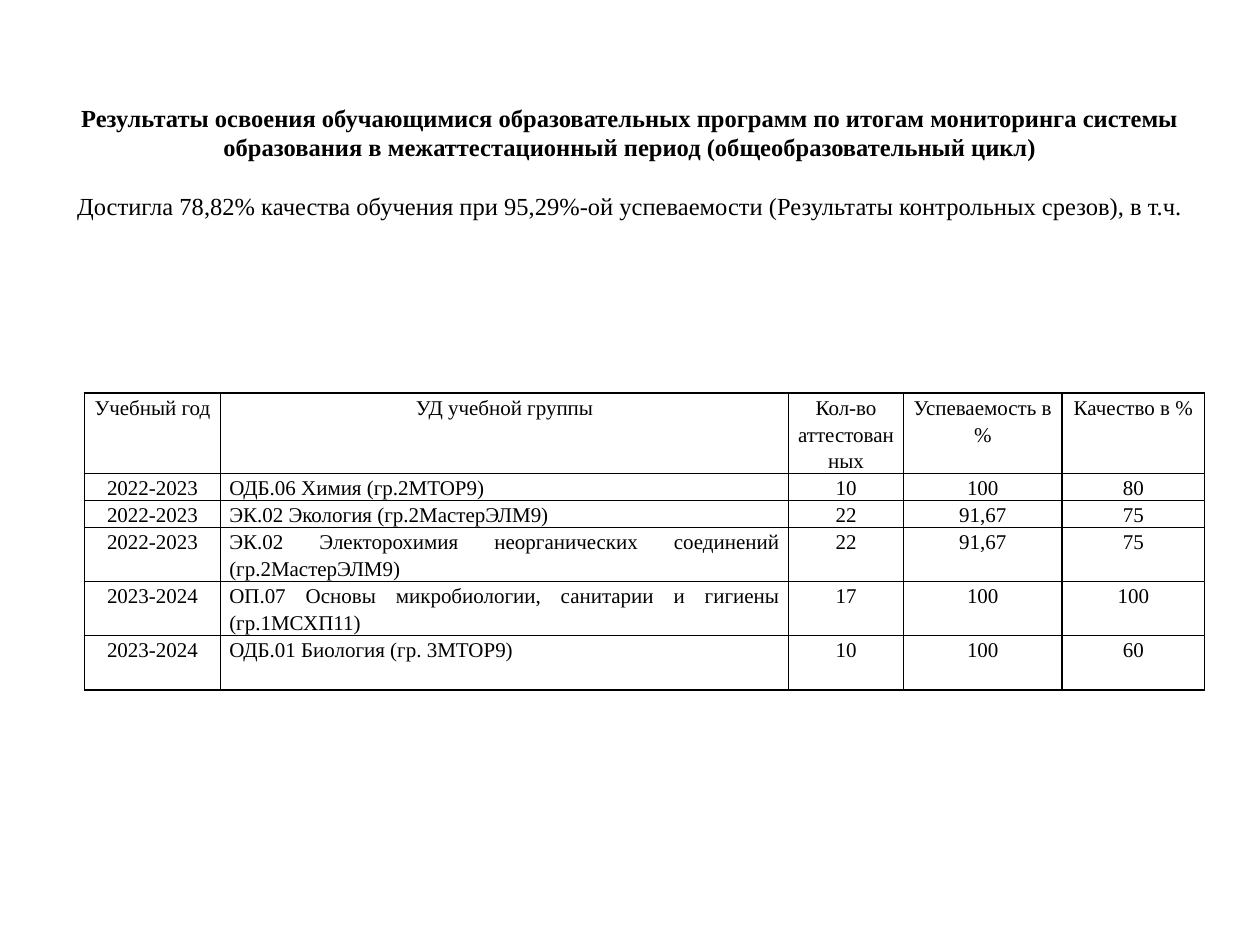
from typing import NamedTuple

from lxml import etree
from pptx import Presentation
from pptx.dml.color import RGBColor
from pptx.enum import text
from pptx.oxml import ns
from pptx.util import Inches, Pt

FONT = "Times New Roman"
HUES = {"ink": "000000", "line": "000000"}
CENTER, JUSTIFY = text.PP_ALIGN.CENTER, text.PP_ALIGN.JUSTIFY


class Row(NamedTuple):
    year: str
    course: str
    count: str
    passed: str
    quality: str


HEAD = Row("Учебный год", "УД учебной группы", "Кол-во аттестованных",
           "Успеваемость в %", "Качество в %")
ROWS = [
    HEAD,
    Row("2022-2023", "ОДБ.06 Химия (гр.2МТОР9)", "10", "100", "80"),
    Row("2022-2023", "ЭК.02 Экология (гр.2МастерЭЛМ9)", "22", "91,67", "75"),
    Row("2022-2023", "ЭК.02 Электорохимия неорганических соединений (гр.2МастерЭЛМ9)",
        "22", "91,67", "75"),
    Row("2023-2024", "ОП.07 Основы микробиологии, санитарии и гигиены (гр.1МСХП11)",
        "17", "100", "100"),
    Row("2023-2024", "ОДБ.01 Биология (гр. 3МТОР9)", "10", "100", "60"),
]
WIDTHS = [1.08, 4.51, 0.91, 1.26, 1.13]
HEIGHTS = [0.64, 0.21, 0.21, 0.43, 0.43, 0.43]


def style(para, size: float, align, bold: bool = False) -> None:
    para.alignment = align
    font = para.font
    font.name, font.size, font.bold = FONT, Pt(size), bold
    font.color.rgb = RGBColor.from_string(HUES["ink"])


def border(cell) -> None:
    props = cell._tc.get_or_add_tcPr()
    for spot, side in enumerate(("lnL", "lnR", "lnT", "lnB")):
        line = etree.Element(ns.qn(f"a:{side}"), w=str(Pt(1)))
        fill = etree.SubElement(line, ns.qn("a:solidFill"))
        etree.SubElement(fill, ns.qn("a:srgbClr"), val=HUES["line"])
        props.insert(spot, line)


def fill_cell(cell, words: str, align) -> None:
    cell.text = words
    cell.margin_left = cell.margin_right = Inches(0.07)
    cell.margin_top = cell.margin_bottom = 0
    cell.fill.background()
    para = cell.text_frame.paragraphs[0]
    style(para, 12, align)
    para.line_spacing = 1.15
    border(cell)


def add_title(slide) -> None:
    title = slide.shapes.title
    title.left, title.top = Inches(0.5), Inches(0)
    title.width, title.height = Inches(9), Inches(2.57)
    frame = title.text_frame
    frame.auto_size = text.MSO_AUTO_SIZE.NONE
    frame.vertical_anchor = text.MSO_ANCHOR.MIDDLE
    head = frame.paragraphs[0]
    head.text = ("Результаты освоения обучающимися образовательных программ по итогам "
                 "мониторинга системы образования в межаттестационный период "
                 "(общеобразовательный цикл)")
    style(head, 14, CENTER, bold=True)
    note = frame.add_paragraph()
    note.text = ("Достигла 78,82% качества обучения при 95,29%-ой успеваемости "
                 "(Результаты контрольных срезов), в т.ч.")
    style(note, 14, CENTER)
    note.space_before = Pt(17)


def add_grid(slide) -> None:
    grid = slide.shapes.add_table(
        len(ROWS), len(WIDTHS), Inches(0.67), Inches(3.12),
        Inches(sum(WIDTHS)), Inches(sum(HEIGHTS))).table
    grid.first_row = grid.horz_banding = False
    for col, width in zip(grid.columns, WIDTHS):
        col.width = Inches(width)
    for line, height in zip(grid.rows, HEIGHTS):
        line.height = Inches(height)
    for r, row in enumerate(ROWS):
        for c, words in enumerate(row):
            # Course names are justified below the header
            align = JUSTIFY if r and c == 1 else CENTER
            fill_cell(grid.cell(r, c), words, align)


def main() -> None:
    deck = Presentation()
    deck.slide_width, deck.slide_height = Inches(10), Inches(7.5)
    slide = deck.slides.add_slide(deck.slide_layouts[5])
    # Heading with summary line
    add_title(slide)
    # Results by course
    add_grid(slide)
    deck.save("out.pptx")


if __name__ == "__main__":
    main()
